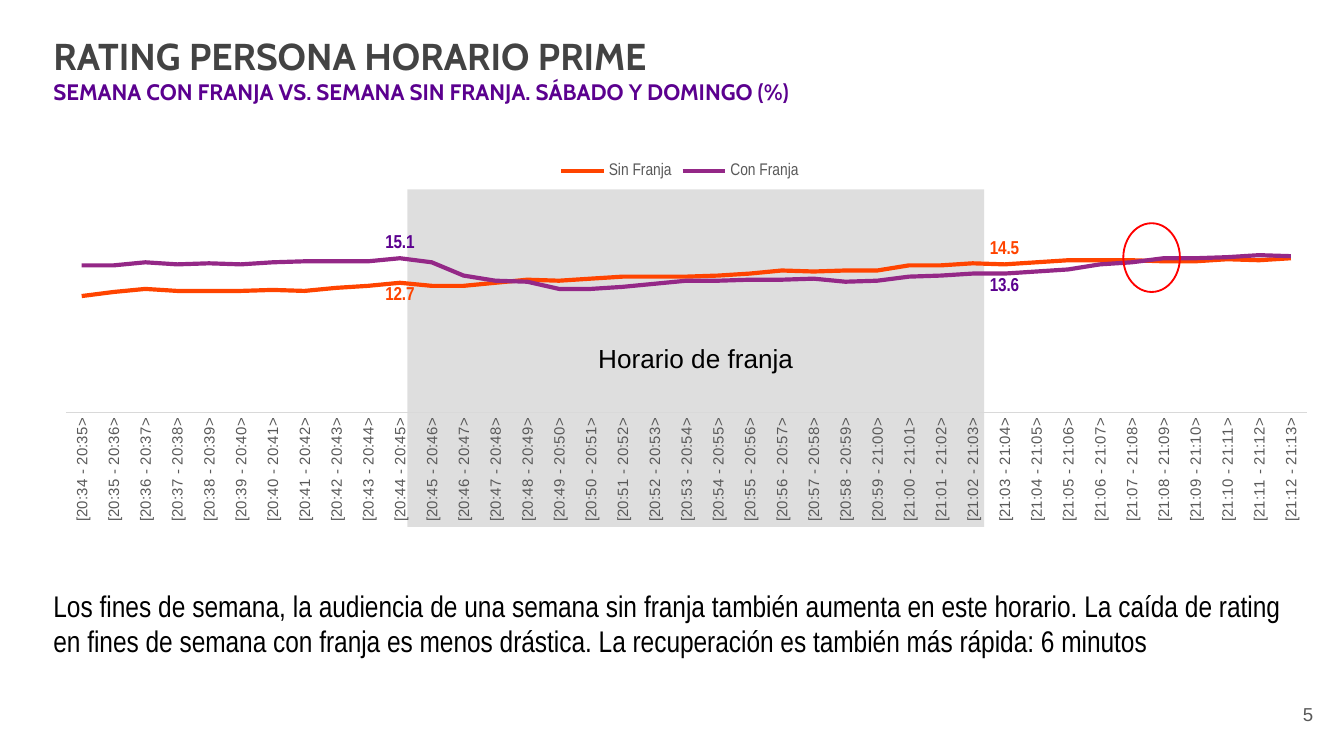
from lxml.etree import SubElement
from pptx import Presentation
from pptx.chart.data import CategoryChartData
from pptx.dml.color import RGBColor
from pptx.enum.chart import XL_CHART_TYPE, XL_LABEL_POSITION, XL_LEGEND_POSITION, XL_TICK_MARK
from pptx.enum.shapes import MSO_SHAPE
from pptx.enum.text import MSO_ANCHOR, PP_ALIGN
from pptx.oxml import parse_xml
from pptx.oxml.ns import nsdecls, qn
from pptx.util import Cm, Pt

COLORS = {
    "black": "000000", "title": "434343", "purple": "5B008F", "gray": "595959",
    "band": "9B9B9B", "axis": "D9D9D9", "orange": "FF4400", "violet": "942887", "red": "FF0000",
}
WITHOUT_STRIP = [
    11.4, 11.8, 12.1, 11.9, 11.9, 11.9, 12, 11.9, 12.2, 12.4, 12.7, 12.4, 12.4,
    12.7, 13, 12.9, 13.1, 13.3, 13.3, 13.3, 13.4, 13.6, 13.9, 13.8, 13.9, 13.9,
    14.4, 14.4, 14.6, 14.5, 14.7, 14.9, 14.9, 14.9, 14.8, 14.8, 15, 14.9, 15.1,
]
WITH_STRIP = [
    14.4, 14.4, 14.7, 14.5, 14.6, 14.5, 14.7, 14.8, 14.8, 14.8, 15.1, 14.7, 13.4,
    12.9, 12.8, 12.1, 12.1, 12.3, 12.6, 12.9, 12.9, 13, 13, 13.1, 12.8, 12.9,
    13.3, 13.4, 13.6, 13.6, 13.8, 14, 14.5, 14.7, 15.1, 15.1, 15.2, 15.4, 15.3,
]
ABOVE, BELOW = XL_LABEL_POSITION.ABOVE, XL_LABEL_POSITION.BELOW
SERIES = [
    ("Sin Franja", WITHOUT_STRIP, "orange", "orange", {10: BELOW, 29: ABOVE}),
    ("Con Franja", WITH_STRIP, "violet", "purple", {10: ABOVE, 29: BELOW}),
]


def clock(minute):
    return f"{minute // 60}:{minute % 60:02d}"


class SlideBuilder:
    """Draws styled elements on the current slide."""

    def __init__(self, slide):
        self.slide = slide

    def color(self, name):
        return RGBColor.from_string(COLORS[name])

    def style(self, font, size, color, name="Arial", bold=False):
        font.name, font.size, font.bold = name, Pt(size), bold
        font.color.rgb = self.color(color)

    def fill_text(self, frame, lines, align=PP_ALIGN.LEFT):
        frame.word_wrap = True
        frame.text = "\n".join(line[0] for line in lines)
        for paragraph, line in zip(frame.paragraphs, lines):
            paragraph.alignment = align
            for span in paragraph.runs:
                self.style(span.font, *line[1:])

    def text(self, place, lines, align=PP_ALIGN.LEFT, anchor=MSO_ANCHOR.TOP, inset=0.13):
        box = self.slide.shapes.add_textbox(*map(Cm, place))
        frame = box.text_frame
        frame.margin_top = frame.margin_bottom = Cm(inset)
        frame.vertical_anchor = anchor
        self.fill_text(frame, lines, align)

    def shape(self, kind, place, fill=None, opacity=100, line=None):
        shape = self.slide.shapes.add_shape(kind, *map(Cm, place))
        shape.shadow.inherit = False
        if fill:
            shape.fill.solid()
            shape.fill.fore_color.rgb = self.color(fill)
            color = shape.fill._xPr.find(".//" + qn("a:srgbClr"))
            SubElement(color, qn("a:alpha"), val=str(opacity * 1000))
        else:
            shape.fill.background()
        if line:
            shape.line.color.rgb = self.color(line)
            shape.line.width = Pt(1)
        else:
            shape.line.fill.background()
        return shape

    def line_chart(self, place, categories, series_list, plot_area):
        data = CategoryChartData()
        data.categories = categories
        for name, values, *_ in series_list:
            data.add_series(name, values)
        chart = self.slide.shapes.add_chart(
            XL_CHART_TYPE.LINE, *map(Cm, place), data).chart
        self.style(chart.font, 10, "black")
        chart.has_title = False
        chart.has_legend = True
        chart.legend.position = XL_LEGEND_POSITION.TOP
        chart.legend.include_in_layout = False
        self.style(chart.legend.font, 9, "gray", "Arial Narrow")
        self.axes(chart)
        self.clear_background(chart, plot_area)
        chart.plots[0].vary_by_categories = False
        for series, (_, _, color, label_color, labels) in zip(chart.plots[0].series, series_list):
            series.smooth = False
            series.format.line.color.rgb = self.color(color)
            series.format.line.width = Pt(2.25)
            series.data_labels.show_value = False
            for index, position in labels.items():
                label = series.points[index].data_label
                self.style(label.font, 10, label_color, "Arial Narrow", True)
                label.position = position

    def axes(self, chart):
        axis = chart.category_axis
        axis.major_tick_mark = axis.minor_tick_mark = XL_TICK_MARK.NONE
        axis.format.line.color.rgb = self.color("axis")
        axis.format.line.width = Pt(0.75)
        self.style(axis.tick_labels.font, 8, "gray")
        body = axis._element.find(qn("c:txPr")).find(qn("a:bodyPr"))
        body.set("rot", "-5400000")
        body.set("vert", "horz")
        value_axis = chart.value_axis
        value_axis.minimum_scale, value_axis.maximum_scale = 0, 20
        value_axis.has_major_gridlines = False
        value_axis.visible = False

    def clear_background(self, chart, plot_area):
        clear = f'<c:spPr {nsdecls("c", "a")}><a:noFill/><a:ln><a:noFill/></a:ln></c:spPr>'
        space = chart._chartSpace
        space.find(qn("c:chart")).addnext(parse_xml(clear))
        plot = space.find(".//" + qn("c:plotArea"))
        plot.append(parse_xml(clear))
        for layout in plot.findall(qn("c:layout")):
            plot.remove(layout)
        layout = parse_xml(f'<c:layout {nsdecls("c")}/>')
        manual = SubElement(layout, qn("c:manualLayout"))
        settings = [("layoutTarget", "inner"), ("xMode", "edge"), ("yMode", "edge")]
        for tag, value in settings + list(zip("xywh", plot_area)):
            SubElement(manual, qn(f"c:{tag}"), val=str(value))
        plot.insert(0, layout)


def main():
    deck = Presentation()
    deck.slide_width, deck.slide_height = Cm(25.4), Cm(14.29)
    page = SlideBuilder(deck.slides.add_slide(deck.slide_layouts[6]))

    band = page.shape(MSO_SHAPE.RECTANGLE, (7.7, 3.58, 10.9, 6.38), fill="band", opacity=32)
    band.text_frame.vertical_anchor = MSO_ANCHOR.MIDDLE
    page.fill_text(band.text_frame, [("Horario de franja", 14, "black")], PP_ALIGN.CENTER)

    start = 20 * 60 + 34
    categories = [f"[{clock(minute)} - {clock(minute + 1)}>"
                  for minute in range(start, start + len(WITH_STRIP))]
    page.line_chart((0.76, 2.79, 24.18, 7.16), categories, SERIES, (0.02, 0.16, 0.97, 0.54))

    page.text((23.55, 12.95, 1.52, 1.09), [("5", 10, "gray")],
              PP_ALIGN.RIGHT, MSO_ANCHOR.MIDDLE, inset=0.25)
    page.text((0.76, 0.38, 21.31, 1.57), [
        ("RATING PERSONA HORARIO PRIME", 20, "title", "Cabin", True),
        ("SEMANA CON FRANJA VS. SEMANA SIN FRANJA. SÁBADO Y DOMINGO (%)",
         12, "purple", "Cabin", True),
    ], inset=0.25)
    page.text((0.76, 10.97, 23.72, 1.63), [(
        "Los fines de semana, la audiencia de una semana sin franja también aumenta en este "
        "horario. La caída de rating en fines de semana con franja es menos drástica. "
        "La recuperación es también más rápida: 6 minutos", 16, "black", "Arial Narrow",
    )], PP_ALIGN.JUSTIFY)
    page.shape(MSO_SHAPE.OVAL, (21.23, 4.22, 1.07, 1.3), line="red")
    deck.save("out.pptx")


if __name__ == "__main__":
    main()
